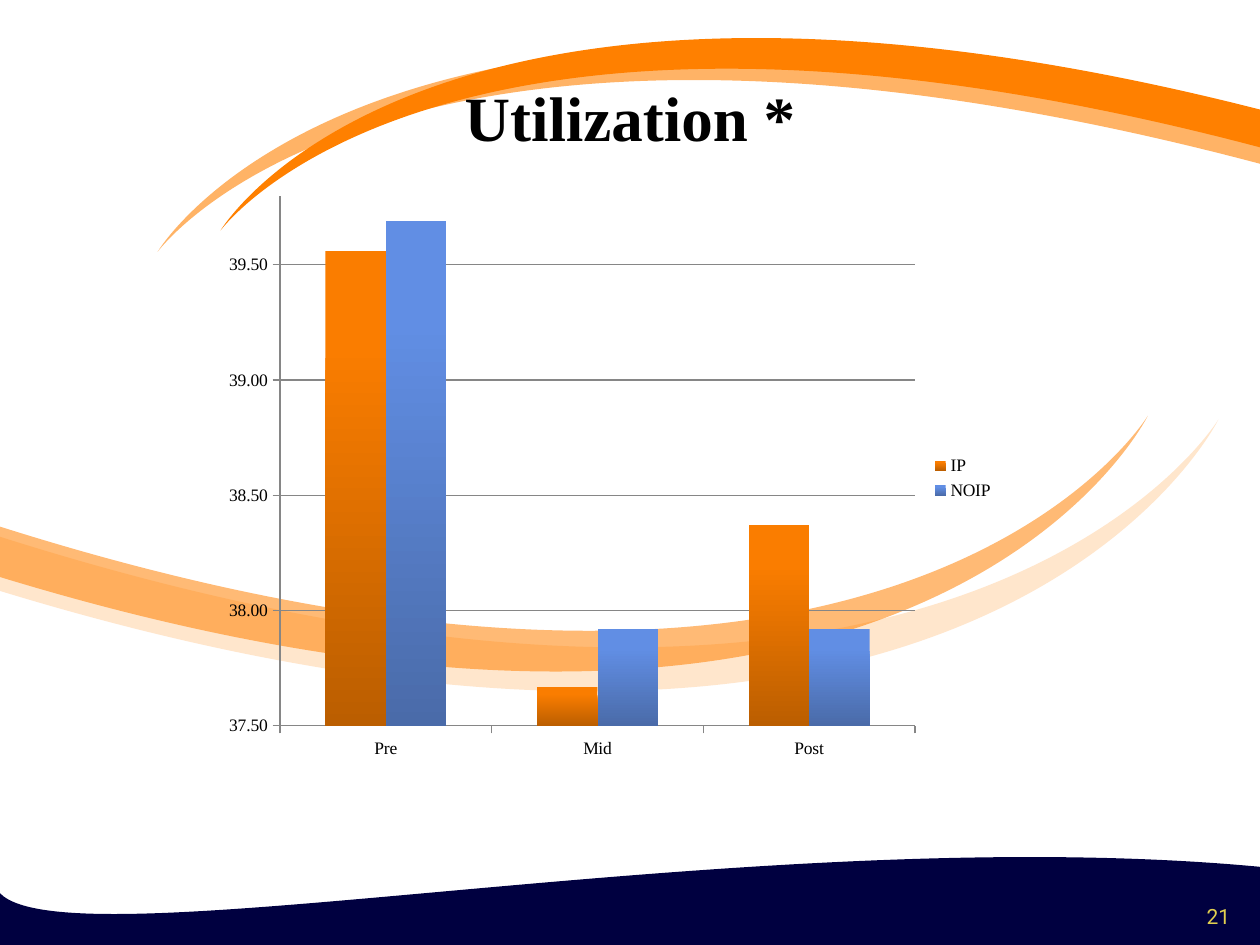
from lxml import etree
from pptx import Presentation
from pptx import util as u
from pptx.chart.data import CategoryChartData
from pptx.dml.color import RGBColor
from pptx.enum import chart as ch, text
from pptx.oxml import parse_xml
from pptx.oxml.ns import nsdecls, qn

NAVY = RGBColor(0x00, 0x00, 0x40)
ORANGE = RGBColor(0xFF, 0x80, 0x00)
PEACH = RGBColor(0xFF, 0xB3, 0x66)
CREAM = RGBColor(0xFF, 0xE6, 0xCC)
BLACK = RGBColor(0x00, 0x00, 0x00)
GOLD = RGBColor(0xE1, 0xCF, 0x50)
GRAY = RGBColor(0x86, 0x86, 0x86)
ORANGE_TOP, ORANGE_BASE = RGBColor(0xFA, 0x7D, 0x00), RGBColor(0xBB, 0x5E, 0x00)
BLUE_TOP, BLUE_BASE = RGBColor(0x61, 0x8E, 0xE4), RGBColor(0x4A, 0x6B, 0xA9)
SERIF = "Times New Roman"

prs = Presentation()
prs.slide_width, prs.slide_height = u.Inches(10), u.Inches(7.5)
W, H = prs.slide_width, prs.slide_height
s = prs.slides.add_slide(prs.slide_layouts[6])


def add_text(content, x, y, w, h, size=12, font=SERIF, color=BLACK, bold=False,
             anchor=text.MSO_ANCHOR.MIDDLE):
    """Centred text box; x, y, w, h are percentages of the slide."""
    x, y, w, h = (int(v * side / 100) for v, side in zip((x, y, w, h), (W, H, W, H)))
    tf = s.shapes.add_textbox(x, y, w, h).text_frame
    tf.word_wrap = True
    tf.vertical_anchor = anchor
    p = tf.paragraphs[0]
    p.alignment = text.PP_ALIGN.CENTER
    r = p.add_run()
    r.text = content
    r.font.size, r.font.name, r.font.bold = u.Pt(size), font, bold
    r.font.color.rgb = color


def add_swoosh(color, opacity, start, curves, corners=()):
    """Closed outline in inches; each curve is two controls and an end point."""
    points = [pt for curve in curves for pt in curve] + list(corners)
    emu = [(u.Inches(x), u.Inches(y)) for x, y in [start, *points]]
    fb = s.shapes.build_freeform(*emu[0], scale=1.0)
    fb.add_line_segments(emu[1:], close=True)
    sp = fb.convert_to_shape()
    sp.shadow.inherit = False
    sp.line.fill.background()
    sp.fill.solid()
    sp.fill.fore_color.rgb = color
    if opacity < 100:
        clr = sp._element.spPr.find(qn("a:solidFill"))[0]
        etree.SubElement(clr, qn("a:alpha")).set("val", str(opacity * 1000))
    # Each three straight segments become one cubic curve
    segments = list(sp._element.iter(qn("a:lnTo")))
    for i in range(0, 3 * len(curves), 3):
        cubic = etree.Element(qn("a:cubicBezTo"))
        segments[i].addprevious(cubic)
        for seg in segments[i:i + 3]:
            cubic.append(seg[0])
            seg.getparent().remove(seg)


# Background swooshes
add_swoosh(NAVY, 100, (0, 7.09),
           [((0.56, 7.67), (5.96, 6.5), (10, 6.88)), ((10, 7.09), (10.01, 7.32), (10.01, 7.54))],
           corners=[(0, 7.51)])
bands = [
    (CREAM, 100, (0, 4.26), (7.63, 6.68), (9.67, 3.33), (7.82, 7.08), (0, 4.69), (0, 4.63)),
    (PEACH, 100, (10, 1.3), (3.09, -0.53), (1.25, 2), (2.92, -0.83), (10, 0.97), (10, 1.02)),
    (ORANGE, 100, (10, 1.17), (3.49, -0.55), (1.75, 1.83), (3.33, -0.83), (10, 0.87), (10, 0.91)),
    (ORANGE, 54, (0, 4.18), (7.2, 6.46), (9.11, 3.3), (7.37, 6.83), (0, 4.58), (0, 4.53)),
]
for color, opacity, start, bend, tip, back, end, edge in bands:
    add_swoosh(color, opacity, start,
               [(bend, tip, tip), (tip, back, end), (end, edge, start)])

# Title and slide number
add_text("Utilization *", 5, 4, 90, 16.67, size=36, bold=True)
add_text("21", 94.2, 92, 5, 6.9, font="Roboto", color=GOLD, anchor=text.MSO_ANCHOR.BOTTOM)

# Chart
data = CategoryChartData(number_format="###0.00")
data.categories = ["Pre", "Mid", "Post"]
data.add_series("IP", (39.56, 37.67, 38.37))
data.add_series("NOIP", (39.69, 37.92, 37.92))
chart = s.shapes.add_chart(ch.XL_CHART_TYPE.COLUMN_CLUSTERED, int(W * 16.9 / 100),
                           int(H * 19.6 / 100), int(W * 0.63), int(H * 0.62), data).chart
chart.has_title = False
chart.font.size, chart.font.name = u.Pt(10), SERIF
chart.font.color.rgb = BLACK
chart.has_legend = True
chart.legend.position = ch.XL_LEGEND_POSITION.RIGHT
chart.legend.include_in_layout = False

# Axes
val, cat = chart.value_axis, chart.category_axis
val.minimum_scale, val.maximum_scale, val.major_unit = 37.5, 39.8, 0.5
val.has_major_gridlines = True
val.tick_labels.number_format = "###0.00"
val.tick_labels.number_format_is_linked = False
for axis in (val, cat):
    axis.major_tick_mark = ch.XL_TICK_MARK.OUTSIDE
for line in (val.format.line, cat.format.line, val.major_gridlines.format.line):
    line.color.rgb = GRAY
    line.width = u.Pt(0.75)

# Bars shade downwards
plot = chart.plots[0]
plot.gap_width, plot.overlap, plot.vary_by_categories = 150, 0, False
shades = [(ORANGE_TOP, ORANGE_BASE), (BLUE_TOP, BLUE_BASE)]
for series, pair in zip(plot.series, shades):
    fill = series.format.fill
    fill.gradient()
    fill.gradient_angle = 270
    for stop, color, position in zip(fill.gradient_stops, pair, (0.2, 1)):
        stop.color.rgb, stop.position = color, position

# Fixed plot area, as percentages of the chart
area = chart._chartSpace.chart.plotArea
for old in area.findall(qn("c:layout")):
    area.remove(old)
modes = '<c:layoutTarget val="inner"/><c:xMode val="edge"/><c:yMode val="edge"/>'
box = "".join(f'<c:{k} val="{v / 100}"/>' for k, v in zip("xywh", (8.45, 1.8, 80, 90.5)))
area.insert(0, parse_xml(f'<c:layout {nsdecls("c")}><c:manualLayout>{modes}{box}'
                         '</c:manualLayout></c:layout>'))

prs.save("out.pptx")
